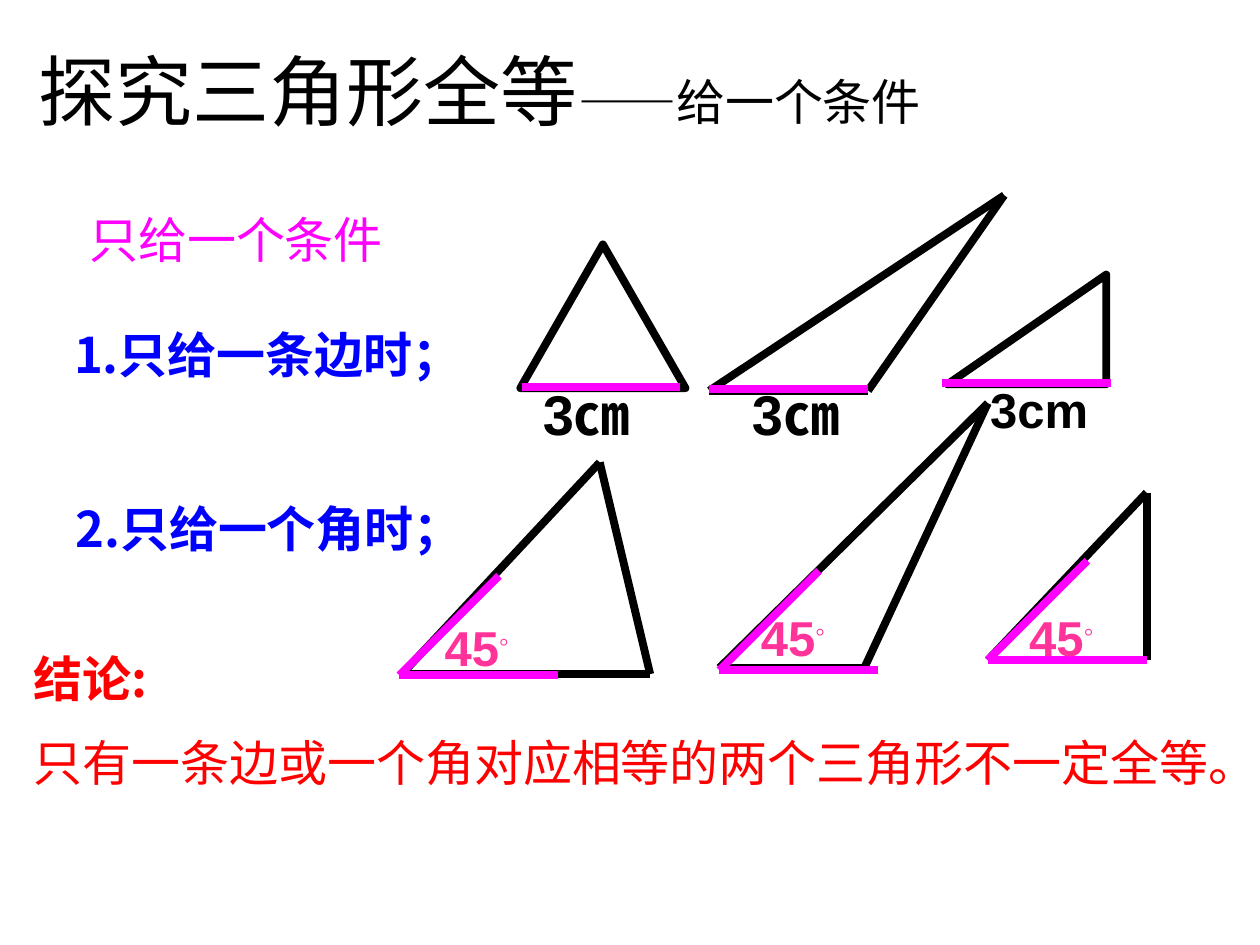
from dataclasses import dataclass

from lxml.etree import SubElement
from pptx import Presentation
from pptx.dml.color import RGBColor
from pptx.enum.lang import MSO_LANGUAGE_ID as Lang
from pptx.enum.shapes import MSO_CONNECTOR as Connector, MSO_SHAPE as Preset
from pptx.enum.text import MSO_ANCHOR as Anchor
from pptx.oxml.ns import qn
from pptx.util import Inches, Pt


@dataclass(frozen=True)
class Theme:
    """Colours, fonts and sizes of the slide."""
    black: RGBColor = RGBColor(0, 0, 0)
    magenta: RGBColor = RGBColor(255, 0, 255)
    pink: RGBColor = RGBColor(255, 51, 153)
    blue: RGBColor = RGBColor(0, 0, 255)
    red: RGBColor = RGBColor(255, 0, 0)
    latin: str = "Arial"
    chinese: str = "Noto Sans CJK SC"
    title: int = 44
    label: int = 32
    body: int = 28
    stroke: float = 4.5


THEME = Theme()


def add_run(paragraph, text, color, size=THEME.body, bold=False, font=THEME.chinese):
    """Append one styled run and return it."""
    run = paragraph.add_run()
    run.text = text
    run.font.size, run.font.bold, run.font.name = Pt(size), bold, font
    run.font.color.rgb = color
    run.font.language_id = Lang.SIMPLIFIED_CHINESE
    SubElement(run.font._element, qn("a:ea"), typeface=THEME.chinese)
    return run


def add_text(slide, box, anchor=Anchor.TOP):
    """Add a wrapping text box and return its frame."""
    frame = slide.shapes.add_textbox(*map(Inches, box)).text_frame
    frame.word_wrap = True
    frame.vertical_anchor = anchor
    return frame


def add_line(slide, start, end, color):
    """Draw one thick straight line."""
    line = slide.shapes.add_connector(Connector.STRAIGHT, *map(Inches, (*start, *end)))
    line.line.color.rgb = color
    line.line.width = Pt(THEME.stroke)
    SubElement(line._element.spPr, qn("a:effectLst"))


def add_sides(slide, corners):
    """Draw a triangle as three lines between its corners."""
    for start, end in zip(corners, corners[1:] + corners[:1]):
        add_line(slide, start, end, THEME.black)


def add_triangle(slide, box, apex):
    """Add an unfilled triangle whose apex lies at a fraction of its width."""
    triangle = slide.shapes.add_shape(Preset.ISOSCELES_TRIANGLE, *map(Inches, box))
    triangle.adjustments[0] = apex
    triangle.fill.background()
    triangle.line.color.rgb = THEME.black
    triangle.line.width = Pt(THEME.stroke)
    triangle.shadow.inherit = False


def add_base(slide, left, top, width, label, box, size):
    """Mark the given side and write its length below."""
    add_line(slide, (left, top), (left + width, top), THEME.magenta)
    add_run(add_text(slide, box).paragraphs[0], label, THEME.black, size, True, THEME.latin)


def add_angle(slide, vertex, box):
    """Mark the given angle with two rays and write its size."""
    x, y = vertex
    for end in ((x + 1.26, y), (x + 0.79, y - 0.79)):
        add_line(slide, vertex, end, THEME.magenta)
    paragraph = add_text(slide, box).paragraphs[0]
    add_run(paragraph, "45", THEME.pink, bold=True, font=THEME.latin)
    degree = add_run(paragraph, "◦", THEME.pink, font=THEME.latin)
    degree.font._element.set("baseline", "30000")


def add_title(slide, box):
    """Write the title with its smaller second part."""
    paragraph = add_text(slide, box, Anchor.MIDDLE).paragraphs[0]
    add_run(paragraph, "探究三角形全等", THEME.black, THEME.title)
    add_run(paragraph, "——给一个条件", THEME.black)


def add_case(slide, box, text, color, bold=True, hanging=0):
    """Write one case, with an optional hanging indent."""
    paragraph = add_text(slide, box).paragraphs[0]
    if hanging:
        properties = paragraph._p.get_or_add_pPr()
        properties.set("marL", str(Inches(hanging)))
        properties.set("indent", str(-Inches(hanging)))
    add_run(paragraph, text, color, bold=bold)


def add_conclusion(slide, box):
    """Write the conclusion heading and its sentence."""
    frame = add_text(slide, box)
    add_run(frame.paragraphs[0], "结论:", THEME.red, bold=True)
    sentence = frame.add_paragraph()
    sentence.space_before = Pt(THEME.body / 2)
    add_run(sentence, "只有一条边或一个角对应相等的两个三角形不一定全等。", THEME.red)


def add_side_examples(slide):
    """Draw three triangles sharing one side length."""
    add_triangle(slide, (4.13, 1.94, 1.31, 1.14), 0.5)
    add_sides(slide, [(5.63, 3.1), (7.97, 1.55), (6.89, 3.1)])
    add_triangle(slide, (7.52, 2.18, 1.26, 0.87), 1)
    add_base(slide, 4.14, 3.07, 1.26, "3㎝", (4.21, 2.96, 1.26, 0.63), THEME.label)
    add_base(slide, 5.63, 3.09, 1.26, "3㎝", (5.87, 2.96, 1.06, 0.63), THEME.label)
    add_base(slide, 7.48, 3.04, 1.34, "3cm", (7.76, 2.96, 1.42, 0.57), THEME.body)


def add_angle_examples(slide):
    """Draw three triangles sharing one angle."""
    examples = (
        ([(3.19, 5.35), (4.76, 3.67), (5.16, 5.35)], (3.17, 5.36), (3.43, 4.85, 1.08, 0.57)),
        ([(5.71, 5.3), (7.84, 3.2), (6.86, 5.3)], (5.71, 5.32), (5.94, 4.77, 1.26, 0.57)),
        ([(7.84, 5.24), (9.1, 3.91), (9.1, 5.24)], (7.84, 5.24), (8.07, 4.77, 1.08, 0.57)),
    )
    for corners, vertex, label_box in examples:
        add_sides(slide, corners)
        add_angle(slide, vertex, label_box)


def main():
    """Build and save the slide."""
    deck = Presentation()
    deck.slide_width, deck.slide_height = Inches(10), Inches(7.5)
    slide = deck.slides.add_slide(deck.slide_layouts[6])
    add_title(slide, (0.21, 0.33, 8.88, 0.77))
    add_case(slide, (0.61, 1.61, 2.82, 0.57), "只给一个条件", THEME.magenta, bold=False)
    add_case(slide, (0.49, 2.53, 3.26, 0.61), "1.只给一条边时；", THEME.blue, hanging=0.38)
    add_case(slide, (0.5, 3.91, 3.28, 0.57), "2.只给一个角时；", THEME.blue)
    add_side_examples(slide)
    add_angle_examples(slide)
    add_conclusion(slide, (0.17, 5.1, 9.89, 1.28))
    deck.save("out.pptx")


if __name__ == "__main__":
    main()
